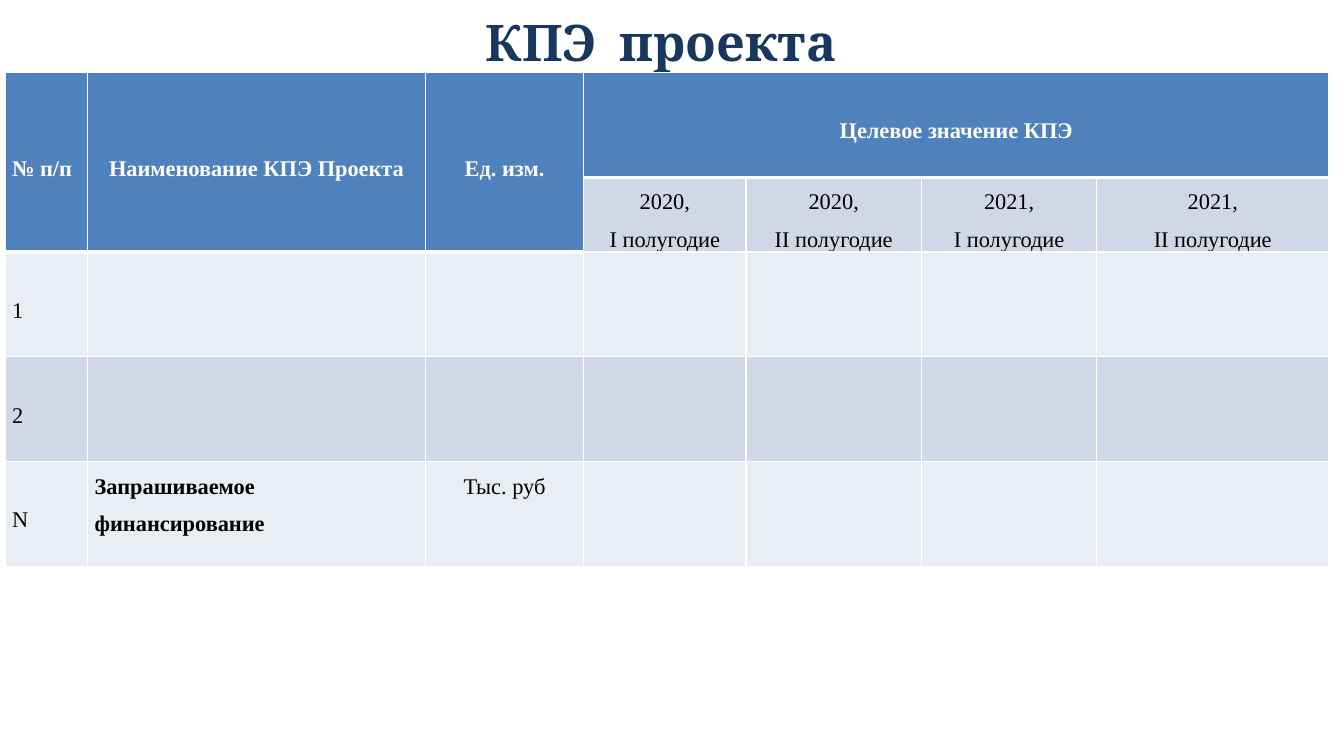
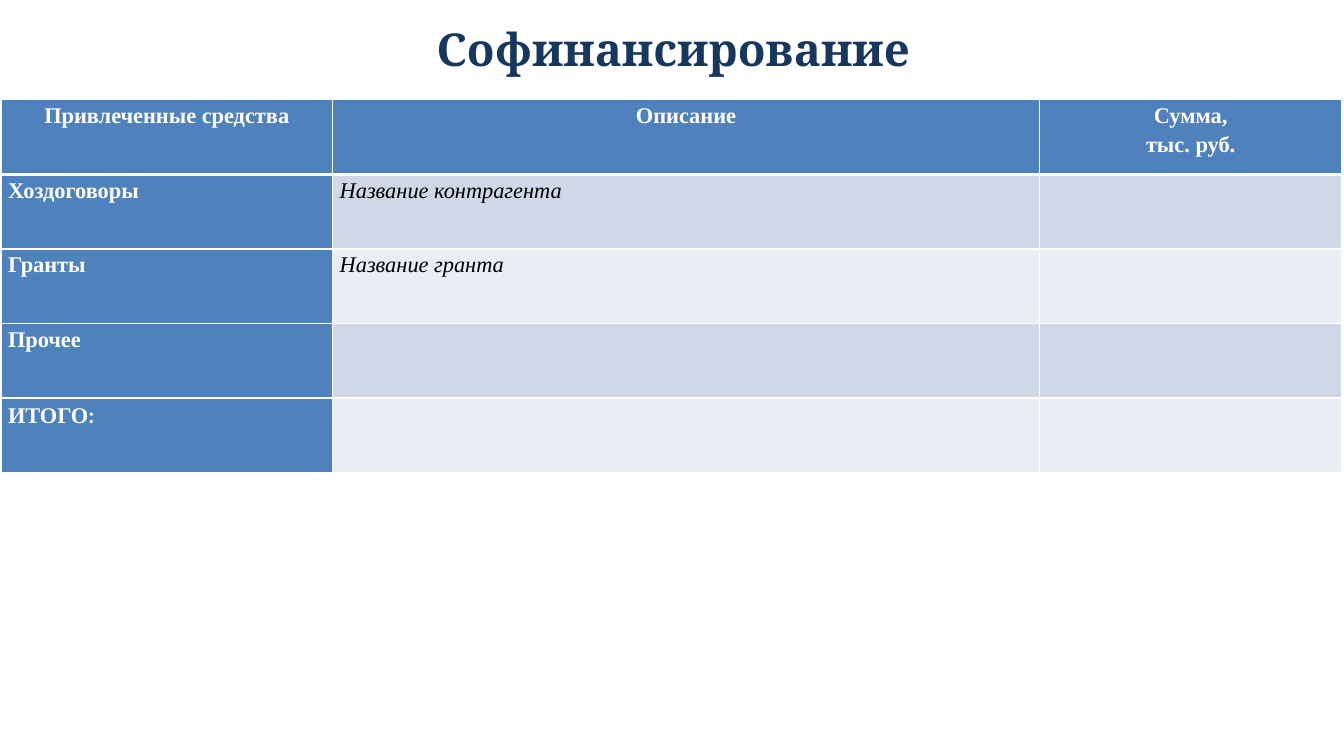
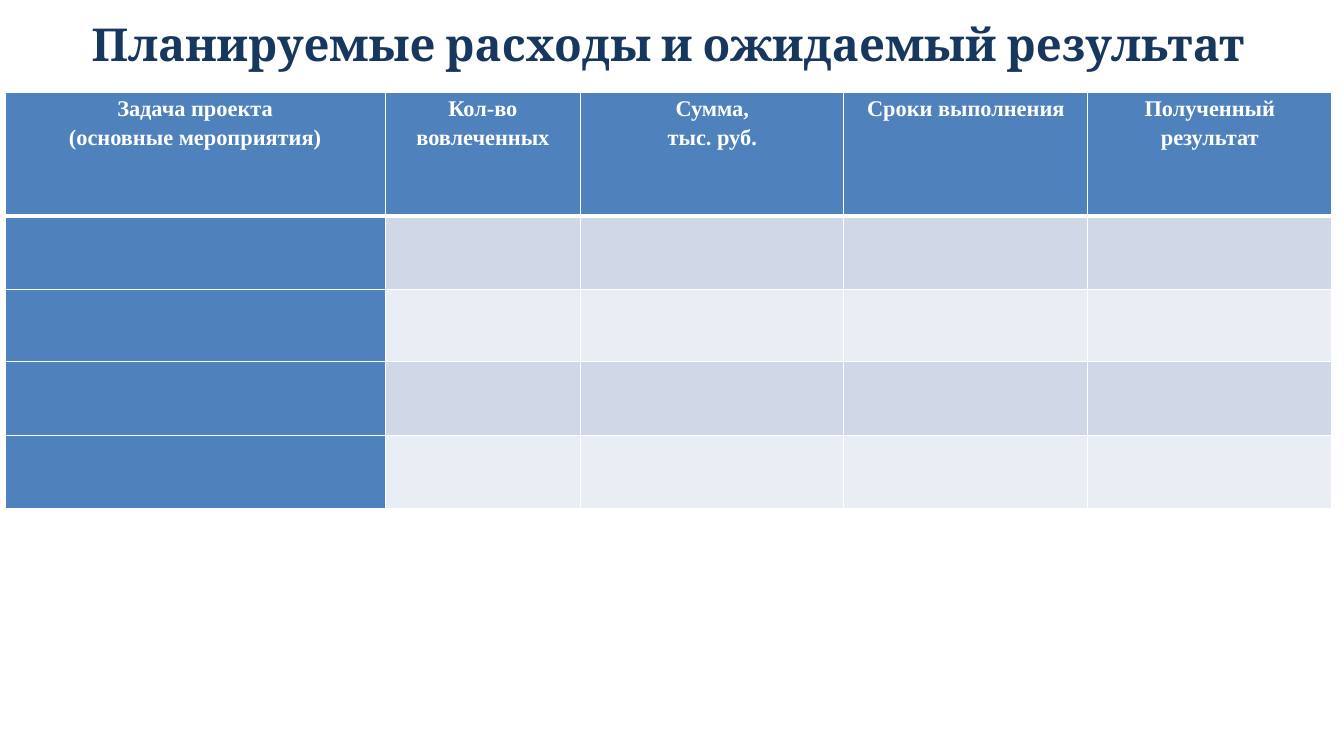
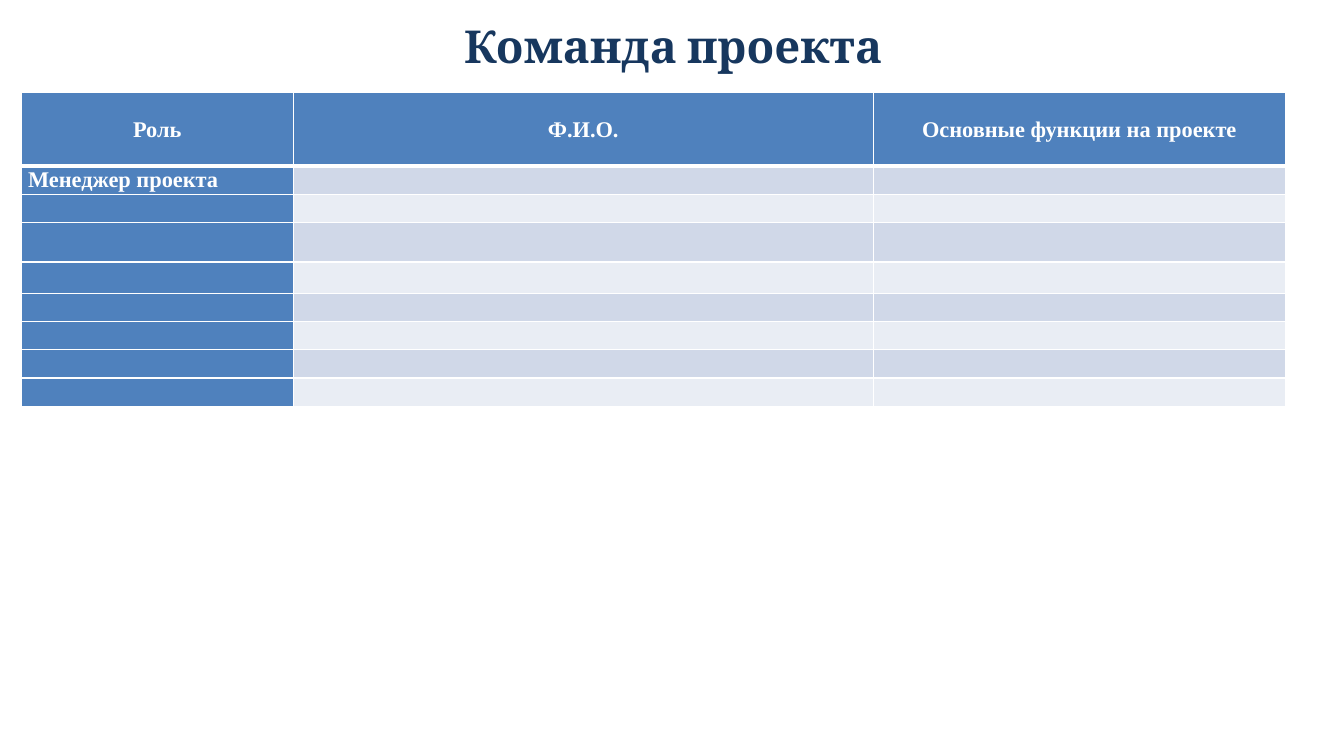
from dataclasses import dataclass

from lxml import etree
from pptx import Presentation
from pptx import util as u
from pptx.dml.color import RGBColor
from pptx.enum import text
from pptx.oxml import ns

COLORS = {
    "title": "17375E",
    "accent": "4F81BD",
    "dark_band": "D0D8E8",
    "light_band": "E9EDF4",
    "white": "FFFFFF",
    "black": "000000",
}
TITLE_FONT = "Cambria"
BODY_FONT = "Times New Roman"
BODY_SIZE = 16
LEFT, CENTER, JUSTIFY = text.PP_ALIGN.LEFT, text.PP_ALIGN.CENTER, text.PP_ALIGN.JUSTIFY
TOP, MIDDLE = text.MSO_ANCHOR.TOP, text.MSO_ANCHOR.MIDDLE


@dataclass(frozen=True)
class Title:
    text: str
    left: float
    top: float
    width: float
    height: float
    size: float = 32.4


@dataclass(frozen=True)
class Entry:
    """Text of one cell; each line is a paragraph."""
    text: str
    align: text.PP_ALIGN = LEFT
    anchor: text.MSO_ANCHOR = TOP
    bold: bool = False
    italic: bool = False
    suffix: str = ""
    suffix_font: str = BODY_FONT


@dataclass(frozen=True)
class Grid:
    left: float
    top: float
    columns: list[float]
    rows: list[float]
    entries: dict[tuple[int, int], Entry]
    line_spacing: float
    key_column: bool = True
    merges: tuple[tuple[int, int, int, int], ...] = ()

    def is_accent(self, row: int, column: int) -> bool:
        in_merge = any(
            top <= row <= bottom and first <= column <= last
            for top, first, bottom, last in self.merges
        )
        return row == 0 or in_merge or (self.key_column and column == 0)

    def is_heading(self, row: int, column: int) -> bool:
        return self.is_accent(row, column) and not (self.key_column and row > 0)


def rgb(name: str) -> RGBColor:
    return RGBColor.from_string(COLORS[name])


def add_text(paragraph, content: str, *, font: str = BODY_FONT, size: float = BODY_SIZE,
             color: str = "black", bold: bool = False, italic: bool = False) -> None:
    run = paragraph.add_run()
    run.text = content
    run.font.name = font
    run.font.size = u.Pt(size)
    run.font.color.rgb = rgb(color)
    run.font.bold = bold
    run.font.italic = italic


def set_borders(cell, widths: dict[str, float]) -> None:
    """Draw white cell borders; they must precede the fill in the cell properties."""
    properties = cell._tc.get_or_add_tcPr()
    for index, (side, width) in enumerate(widths.items()):
        line = etree.Element(ns.qn(f"a:ln{side}"), w=str(u.Pt(width)))
        fill = etree.SubElement(line, ns.qn("a:solidFill"))
        etree.SubElement(fill, ns.qn("a:srgbClr"), val=COLORS["white"])
        properties.insert(index, line)


def set_empty_size(paragraph) -> None:
    """Keep an empty cell from growing to the default text size."""
    etree.SubElement(paragraph._p, ns.qn("a:endParaRPr"), sz=str(BODY_SIZE * 100))


def fill_cell(cell, entry: Entry, color: str, bold: bool, line_spacing: float) -> None:
    cell.vertical_anchor = entry.anchor
    frame = cell.text_frame
    for index, line in enumerate(entry.text.split("\n")):
        paragraph = frame.add_paragraph() if index else frame.paragraphs[0]
        paragraph.alignment = entry.align
        paragraph.line_spacing = line_spacing
        add_text(paragraph, line, color=color, bold=bold, italic=entry.italic)
    if entry.suffix:
        add_text(paragraph, entry.suffix, font=entry.suffix_font, color=color, bold=bold)


def draw_table(slide, grid: Grid) -> None:
    table = slide.shapes.add_table(
        len(grid.rows), len(grid.columns), u.Inches(grid.left), u.Inches(grid.top),
        u.Inches(sum(grid.columns)), u.Inches(sum(grid.rows)),
    ).table
    table.first_row = table.horz_banding = False
    for column, width in zip(table.columns, grid.columns):
        column.width = u.Inches(width)
    for row, height in zip(table.rows, grid.rows):
        row.height = u.Inches(height)

    for row in range(len(grid.rows)):
        for column in range(len(grid.columns)):
            cell = table.cell(row, column)
            accent = grid.is_accent(row, column)
            band = "dark_band" if row % 2 else "light_band"
            cell.fill.solid()
            cell.fill.fore_color.rgb = rgb("accent" if accent else band)
            cell.margin_left = cell.margin_right = u.Inches(0.07)
            cell.margin_top = cell.margin_bottom = 0
            under_heading = row > 0 and grid.is_heading(row - 1, column)
            heading = grid.is_heading(row, column)
            set_borders(cell, {"L": 1, "R": 1, "T": 3 if under_heading else 1,
                               "B": 3 if heading else 1})
            entry = grid.entries.get((row, column))
            if entry:
                fill_cell(cell, entry, "white" if accent else "black",
                          accent or entry.bold, grid.line_spacing)
            else:
                set_empty_size(cell.text_frame.paragraphs[0])
    for top, first, bottom, last in grid.merges:
        table.cell(top, first).merge(table.cell(bottom, last))


def draw_title(slide, title: Title) -> None:
    shape = slide.shapes.title
    shape.left, shape.top = u.Inches(title.left), u.Inches(title.top)
    shape.width, shape.height = u.Inches(title.width), u.Inches(title.height)
    frame = shape.text_frame
    frame.word_wrap = True
    frame.auto_size = text.MSO_AUTO_SIZE.NONE
    frame.vertical_anchor = MIDDLE
    paragraph = frame.paragraphs[0]
    paragraph.alignment = CENTER
    add_text(paragraph, title.text, font=TITLE_FONT, size=title.size, color="title", bold=True)


def heading_row(labels: list[str], anchor: text.MSO_ANCHOR = TOP) -> dict[tuple[int, int], Entry]:
    return {(0, column): Entry(label, CENTER, anchor) for column, label in enumerate(labels)}


HALF_YEARS = ["2020,\nI полугодие", "2020,\nII полугодие",
              "2021,\nI полугодие", "2021,\nII полугодие"]

SLIDES = [
    (
        Title("КПЭ  проекта", 2.06, 0.22, 9, 0.39, size=36),
        Grid(
            0.05, 0.72, [0.82, 3.35, 1.57, 1.61, 1.74, 1.74, 2.3],
            [1.04, 0.73, 1.04, 1.04, 1.04],
            heading_row(["№ п/п", "Наименование КПЭ Проекта", "Ед. изм.",
                         "Целевое значение КПЭ"], MIDDLE)
            | {(0, 0): Entry("№ п/п", JUSTIFY, MIDDLE)}
            | {(1, column): Entry(label, CENTER, MIDDLE)
               for column, label in enumerate(HALF_YEARS, start=3)}
            | {(row, 0): Entry(label, JUSTIFY, MIDDLE)
               for row, label in enumerate("12N", start=2)}
            | {(4, 1): Entry("Запрашиваемое финансирование", JUSTIFY, bold=True),
               (4, 2): Entry("Тыс. руб", CENTER)},
            line_spacing=1.5, key_column=False,
            merges=((0, 0, 1, 0), (0, 1, 1, 1), (0, 2, 1, 2), (0, 3, 0, 6)),
        ),
    ),
    (
        Title("Софинансирование", 0.68, 0.21, 12, 0.54),
        Grid(
            0.01, 0.99, [3.29, 7.01, 3], [0.74] * 5,
            heading_row(["Привлеченные средства", "Описание", "Сумма,\nтыс. руб."])
            | {(1, 0): Entry("Хоздоговоры"),
               (1, 1): Entry("Название контрагента", italic=True),
               (2, 0): Entry("Гранты"),
               (2, 1): Entry("Название гранта", italic=True),
               (3, 0): Entry("Прочее"),
               (4, 0): Entry("ИТОГО", suffix=":", suffix_font="Calibri")},
            line_spacing=1.15,
        ),
    ),
    (
        Title("Планируемые расходы и ожидаемый результат", 0.63, 0.13, 12, 0.61),
        Grid(
            0.05, 0.92, [3.77, 1.94, 2.61, 2.42, 2.42], [1.22, 0.73, 0.72, 0.73, 0.73],
            heading_row(["Задача проекта\n(основные мероприятия)", "Кол-во вовлеченных",
                         "Сумма,\nтыс. руб.", "Сроки выполнения", "Полученный результат"]),
            line_spacing=1.15,
        ),
    ),
    (
        Title("Команда проекта", 0.68, 0.13, 12, 0.64),
        Grid(
            0.21, 0.92, [2.7, 5.75, 4.09], [0.73, 0.28, 0.28, 0.39, 0.31] + [0.28] * 4,
            heading_row(["Роль", "Ф.И.О.", "Основные функции на проекте"], MIDDLE)
            | {(1, 0): Entry("Менеджер проекта", anchor=MIDDLE)},
            line_spacing=1.0,
        ),
    ),
]


def main() -> None:
    presentation = Presentation()
    presentation.slide_width = u.Inches(13.33)
    presentation.slide_height = u.Inches(7.5)
    title_only = presentation.slide_layouts[5]
    for title, grid in SLIDES:
        slide = presentation.slides.add_slide(title_only)
        draw_title(slide, title)
        draw_table(slide, grid)
    presentation.save("out.pptx")


if __name__ == "__main__":
    main()
